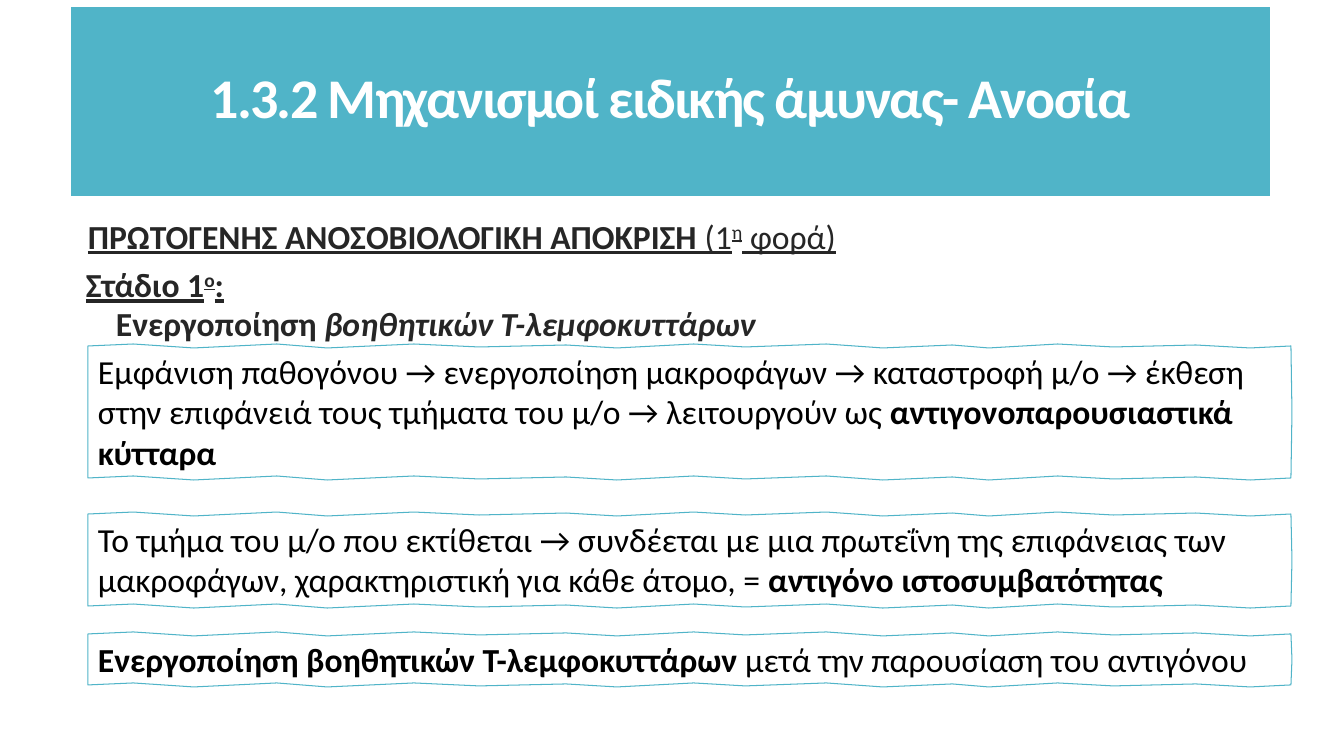
from pptx import Presentation, util as u
from pptx.dml.color import RGBColor
from pptx.enum import shapes, text

TEAL = RGBColor(0x50, 0xB4, 0xC8)
WHITE = RGBColor(0xFF, 0xFF, 0xFF)
BLACK = RGBColor(0, 0, 0)
DARK = RGBColor(0x26, 0x26, 0x26)
FONT = "Calibri"

# Hand-drawn edge: width of each bend, its rise and its dip
BENDS = [(151, -2, 2), (126, -2, 2), (163, -2, 1), (127, -1, 2), (129, -2, 1),
         (141, -2, 2), (91, -1, 2), (139, -2, 1), (136, -1, 2)]


def px(n):
    return u.Inches(n / 100.8)


def write(frame, parts, first=True, color=BLACK, size=24, align=text.PP_ALIGN.LEFT,
          lines=1.0, before=0, indent=0, spacing=0):
    """Add a paragraph; parts are (words, style), style letters: b, i, u, ^."""
    para = frame.paragraphs[0] if first else frame.add_paragraph()
    para.alignment, para.line_spacing = align, lines
    if before:
        para.space_before = u.Pt(before)
    if indent:
        para._p.get_or_add_pPr().set("marL", str(px(indent)))
    for words, style in parts:
        run = para.add_run()
        run.text = words
        font = run.font
        font.name, font.size, font.color.rgb = FONT, u.Pt(size), color
        font.bold, font.italic = "b" in style, "i" in style
        font.underline = "u" in style
        props = run._r.get_or_add_rPr()
        if "^" in style:
            props.set("baseline", "30000")
        if spacing:
            props.set("spc", str(spacing))


def banner(slide, x, y, w, h):
    box = slide.shapes.add_shape(shapes.MSO_SHAPE.RECTANGLE, px(x), px(y), px(w), px(h))
    box.shadow.inherit = False
    box.fill.solid()
    box.fill.fore_color.rgb = TEAL
    box.line.color.rgb, box.line.width = WHITE, u.Pt(3)
    frame = box.text_frame
    frame.word_wrap, frame.vertical_anchor = True, text.MSO_ANCHOR.MIDDLE
    write(frame, [("1.3.2 Μηχανισμοί ειδικής άμυνας- Ανοσία", "b")], color=WHITE,
          size=40, align=text.PP_ALIGN.CENTER, lines=0.85, spacing=-120)


def heading(slide, x, y, w, h):
    frame = slide.shapes.add_textbox(px(x), px(y), px(w), px(h)).text_frame
    frame.word_wrap = True
    look = {"color": DARK, "lines": 0.75}
    write(frame, [("ΠΡΩΤΟΓΕΝΗΣ ΑΝΟΣΟΒΙΟΛΟΓΙΚΗ ΑΠΟΚΡΙΣΗ", "bu"), (" (1", "u"),
                  ("η", "u^"), (" φορά)", "u")], indent=10, **look)
    write(frame, [("Στάδιο 1", "bu"), ("ο", "bu^"), (":", "bu")],
          first=False, before=13, indent=8, **look)
    write(frame, [("Ενεργοποίηση ", "b"), ("βοηθητικών Τ-λεμφοκυττάρων", "bi")],
          first=False, before=6, indent=38, **look)


def edge(x, y):
    """Points of a wavy line from left to right."""
    points = [(x, y)]
    for width, rise, dip in BENDS:
        points += [(x + width * 0.3, y + rise), (x + width * 0.7, y + dip)]
        x += width
    return points + [(x, y)]


def note(slide, x, y, w, h, parts):
    """Wavy frame with text."""
    points = edge(x, y) + [(x + w + 1, y + h / 2)] + edge(x, y + h)[::-1]
    spots = [(px(a), px(b)) for a, b in points]
    build = slide.shapes.build_freeform(*spots[0], scale=1.0)
    build.add_line_segments(spots[1:], close=True)
    box = build.convert_to_shape()
    box.shadow.inherit = False
    box.fill.background()
    box.line.color.rgb, box.line.width = TEAL, u.Pt(0.75)
    frame = box.text_frame
    frame.word_wrap, frame.vertical_anchor = True, text.MSO_ANCHOR.TOP
    frame.margin_left = px(x + 10) - box.left
    frame.margin_top = px(y + 5) - box.top
    frame.margin_right = box.left + box.width - px(x + w - 10)
    frame.margin_bottom = 0
    write(frame, parts)


def main():
    deck = Presentation()
    deck.slide_width, deck.slide_height = px(1344), px(756)
    slide = deck.slides.add_slide(deck.slide_layouts[6])
    banner(slide, 69, 5, 1203, 193)
    heading(slide, 68, 220, 1131, 131)
    notes = [
        (346, 132, [("Εμφάνιση παθογόνου → ενεργοποίηση μακροφάγων → καταστροφή μ/ο → "
                     "έκθεση στην επιφάνειά τους τμήματα του μ/ο → λειτουργούν ως ", ""),
                    ("αντιγονοπαρουσιαστικά κύτταρα", "b")]),
        (514, 92, [("Το τμήμα του μ/ο που εκτίθεται → συνδέεται με μια πρωτεΐνη της "
                    "επιφάνειας των μακροφάγων, χαρακτηριστική για κάθε άτομο, = ", ""),
                   ("αντιγόνο ιστοσυμβατότητας", "b")]),
        (634, 51, [("Ενεργοποίηση βοηθητικών Τ-λεμφοκυττάρων ", "b"),
                   ("μετά την παρουσίαση του αντιγόνου", "")]),
    ]
    for top, tall, parts in notes:
        note(slide, 88, top, sum(bend[0] for bend in BENDS), tall, parts)
    deck.save("out.pptx")


if __name__ == "__main__":
    main()
